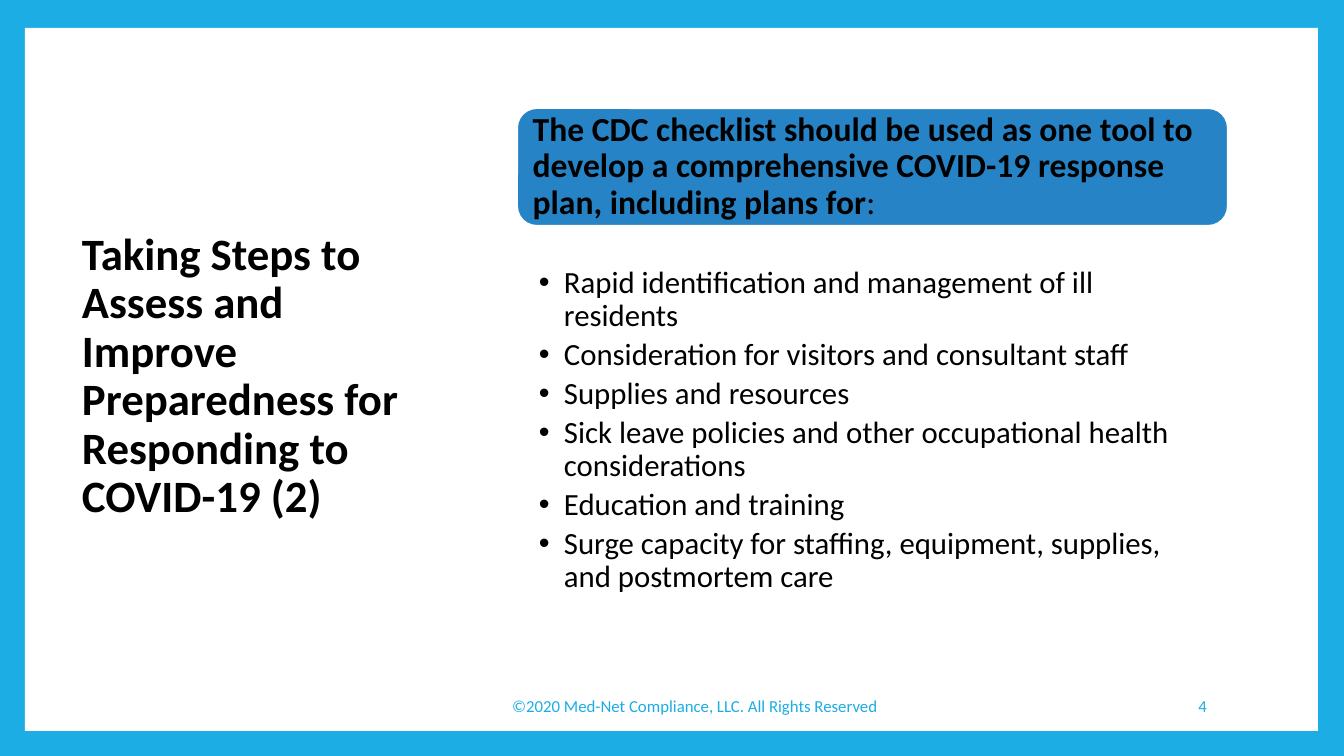
from lxml.etree import SubElement
from pptx import Presentation
from pptx.dml.color import RGBColor
from pptx.enum.shapes import MSO_SHAPE as Shape
from pptx.enum.text import MSO_ANCHOR as Anchor, MSO_AUTO_SIZE as AutoSize, PP_ALIGN as Align
from pptx.oxml.ns import qn
from pptx.util import Pt

EMU_PER_PX = 914400 / 100.8
CYAN, BLUE, WHITE, BLACK = "1CADE4", "2683C6", "FFFFFF", "000000"

TITLE = "Taking Steps to Assess and Improve Preparedness for Responding to COVID-19 (2)"
LEAD = ("The CDC checklist should be used as one tool to develop a comprehensive "
        "COVID-19 response plan, including plans for")
PLANS = [
    "Rapid identification and management of ill residents",
    "Consideration for visitors and consultant staff",
    "Supplies and resources",
    "Sick leave policies and other occupational health considerations",
    "Education and training",
    "Surge capacity for staffing, equipment, supplies, and postmortem care",
]


def px(length):
    return round(length * EMU_PER_PX)


def color(value):
    return RGBColor.from_string(value)


def place(shape, box):
    shape.left, shape.top, shape.width, shape.height = map(px, box)


def set_frame(frame, anchor=Anchor.MIDDLE, insets=(10, 5, 10, 5)):
    frame.word_wrap = True
    frame.auto_size = AutoSize.NONE
    frame.vertical_anchor = anchor
    (frame.margin_left, frame.margin_top,
     frame.margin_right, frame.margin_bottom) = map(px, insets)


def add_bullet(paragraph, indent):
    props = paragraph._p.get_or_add_pPr()
    props.set("marL", str(px(indent)))
    props.set("indent", str(-px(indent)))
    SubElement(props, qn("a:buFont")).set("typeface", "Arial")
    SubElement(props, qn("a:buChar")).set("char", "•")


def write(paragraph, text, size=22, ink=BLACK, bold=False, align=Align.LEFT,
          line=0.9, after=0):
    paragraph.alignment = align
    paragraph.line_spacing = line
    paragraph.space_before = Pt(0)
    paragraph.space_after = Pt(after)
    run = paragraph.add_run()
    run.text = text
    font = run.font
    font.name, font.size, font.bold = "Calibri", Pt(size), bold
    font.color.rgb = color(ink)


def add_block(slide, kind, box, fill, outline=None):
    block = slide.shapes.add_shape(kind, *map(px, box))
    block.shadow.inherit = False
    block.fill.solid()
    block.fill.fore_color.rgb = color(fill)
    if outline:
        block.line.color.rgb = color(outline)
        block.line.width = Pt(1.5)
    else:
        block.line.fill.background()
    return block


def add_backdrop(slide, box):
    slide.background.fill.solid()
    slide.background.fill.fore_color.rgb = color(CYAN)
    panel = add_block(slide, Shape.RECTANGLE, box, WHITE)
    # The panel goes behind the placeholders
    slide.shapes._spTree.insert(2, panel._element)


def add_heading(slide, box):
    heading = slide.shapes.title
    place(heading, box)
    set_frame(heading.text_frame)
    write(heading.text_frame.paragraphs[0], TITLE, size=32, bold=True)


def add_checklist(slide, box):
    left, top, width, height = box
    lead_height, gap = 118, 38

    # Lead sentence
    lead = add_block(slide, Shape.ROUNDED_RECTANGLE,
                     (left, top, width, lead_height), BLUE, WHITE)
    set_frame(lead.text_frame, insets=(10, 0, 10, 0))
    sentence = lead.text_frame.paragraphs[0]
    write(sentence, LEAD, size=24, bold=True)
    write(sentence, ":", size=24)

    # Plans
    plans = slide.placeholders[1]
    used = lead_height + gap
    place(plans, (left, top + used, width, height - used))
    frame = plans.text_frame
    set_frame(frame, Anchor.TOP, insets=(22, 3, 16, 3))
    for index, plan in enumerate(PLANS):
        paragraph = frame.add_paragraph() if index else frame.paragraphs[0]
        add_bullet(paragraph, 25)
        write(paragraph, plan, after=4)


def add_footer(slide, box):
    left, top, width, height = box
    notice_width, number_width = 520, 188
    parts = [
        ("©2020 Med-Net Compliance, LLC. All Rights Reserved",
         left, notice_width, Align.CENTER),
        ("4", left + width - number_width, number_width, Align.RIGHT),
    ]
    for text, part_left, part_width, align in parts:
        label = slide.shapes.add_textbox(*map(px, (part_left, top, part_width, height)))
        set_frame(label.text_frame)
        write(label.text_frame.paragraphs[0], text, size=12, ink=CYAN,
              align=align, line=1.0)


def main():
    deck = Presentation()
    deck.slide_width, deck.slide_height = px(1344), px(756)
    slide = deck.slides.add_slide(deck.slide_layouts[1])
    add_backdrop(slide, (25, 28, 1293, 703))
    add_heading(slide, (72, 68, 371, 618))
    add_checklist(slide, (517, 108, 711, 577))
    add_footer(slide, (435, 686, 782, 40))
    deck.save("out.pptx")


if __name__ == "__main__":
    main()
